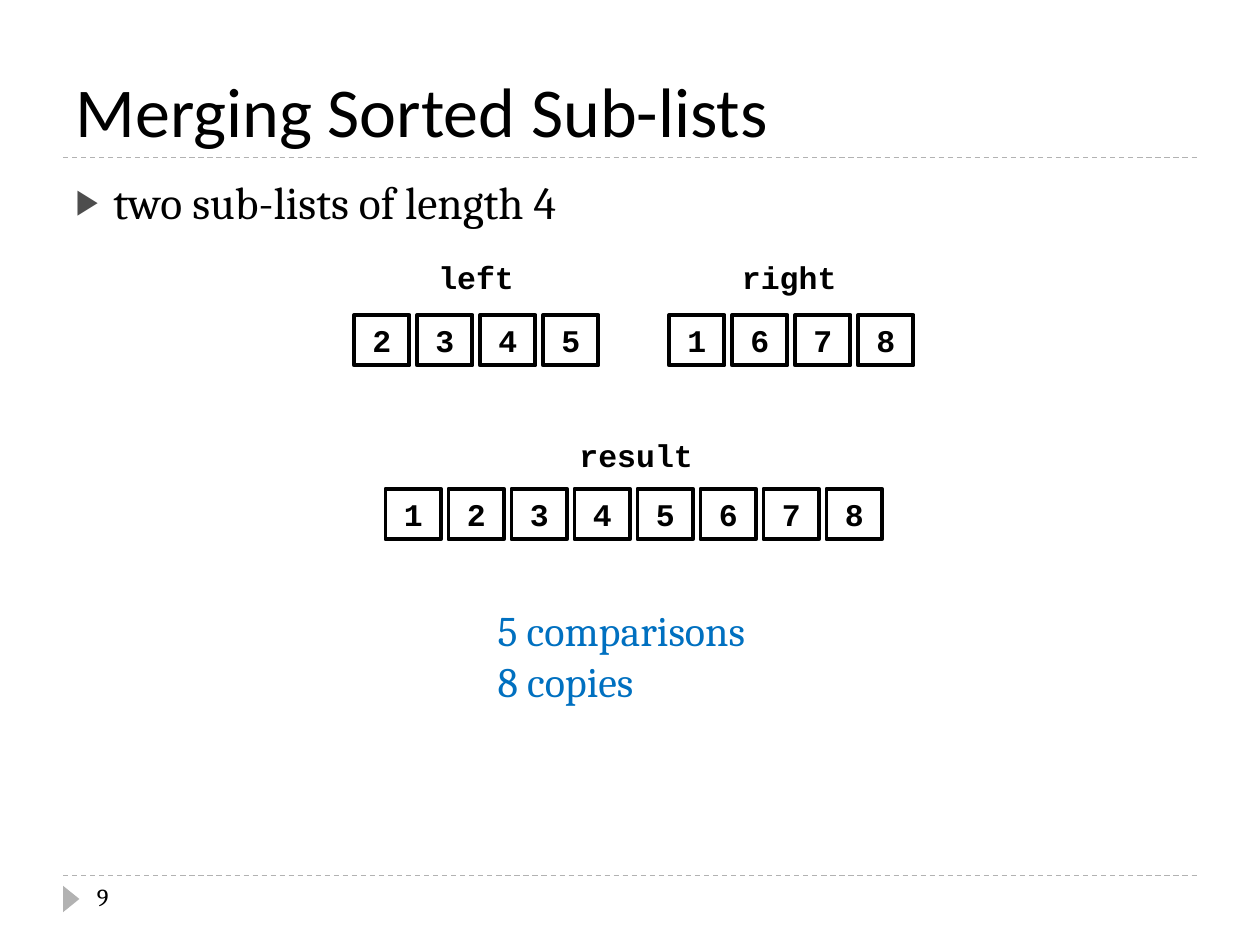
from lxml import etree
from pptx import Presentation
from pptx import util as u
from pptx.dml.color import RGBColor
from pptx.enum import dml, shapes, text
from pptx.oxml.ns import qn

COLORS = {"ink": "000000", "rule": "B2B2B2", "bullet": "4D4D4D", "count": "0070C0"}
PITCH, CELL_W, CELL_H = 0.5, 0.44, 0.4


def color(name):
    """Return the named palette colour."""
    return RGBColor.from_string(COLORS[name])


def inches(box):
    """Convert a left, top, width, height box to lengths."""
    return [u.Inches(side) for side in box]


def style(frame, size, face, ink="ink", bold=False, align=text.PP_ALIGN.LEFT):
    """Format every paragraph of a text frame alike."""
    for paragraph in frame.paragraphs:
        paragraph.alignment = align
        for run in paragraph.runs:
            run.font.size, run.font.name, run.font.bold = u.Pt(size), face, bold
            run.font.color.rgb = color(ink)


def add_label(slide, box, words, size, face, **look):
    """Place unwrapped text in the box."""
    frame = slide.shapes.add_textbox(*inches(box)).text_frame
    frame.text = words
    frame.word_wrap = False
    style(frame, size, face, **look)


def fill_placeholder(holder, box, words, size, face, anchor):
    """Move a placeholder to the box and set its text."""
    holder.left, holder.top, holder.width, holder.height = inches(box)
    frame = holder.text_frame
    frame.text = words
    frame.auto_size = text.MSO_AUTO_SIZE.NONE
    frame.vertical_anchor = anchor
    style(frame, size, face)


def add_bullets(frame):
    """Give each paragraph a small triangular bullet and a hanging indent."""
    for paragraph in frame.paragraphs:
        paragraph.space_before = u.Pt(6)
        props = paragraph._p.get_or_add_pPr()
        props.set("marL", str(u.Inches(0.3)))
        props.set("indent", str(u.Inches(-0.3)))
        tint = etree.SubElement(props, qn("a:buClr"))
        etree.SubElement(tint, qn("a:srgbClr"), val=COLORS["bullet"])
        etree.SubElement(props, qn("a:buSzPct"), val="76000")
        etree.SubElement(props, qn("a:buChar"), char="▶")


def add_rule(slide, left, top, width):
    """Draw a dashed horizontal rule."""
    ends = inches((left, top, left + width, top))
    rule = slide.shapes.add_connector(shapes.MSO_CONNECTOR.STRAIGHT, *ends)
    rule.line.color.rgb = color("rule")
    rule.line.width = u.Pt(0.75)
    rule.line.dash_style = dml.MSO_LINE.DASH
    etree.SubElement(rule._element.spPr, qn("a:effectLst"))


def add_footer(slide, box, number):
    """Draw the footer rule, page marker and page number."""
    left, top, width, height = box
    add_rule(slide, left, top, width)
    marker = slide.shapes.add_shape(
        shapes.MSO_SHAPE.ISOSCELES_TRIANGLE,
        *inches((left - 0.04, top + 0.12, 0.21, 0.13)))
    marker.rotation = 90
    marker.shadow.inherit = False
    marker.fill.solid()
    marker.fill.fore_color.rgb = color("rule")
    marker.line.fill.background()
    add_label(slide, (left + 0.17, top, 2.17, height), number, 14, "Cambria")


def add_list(slide, left, top, values):
    """Draw a row of list cells at an even pitch."""
    for column, value in enumerate(values):
        cell = slide.shapes.add_shape(
            shapes.MSO_SHAPE.RECTANGLE,
            *inches((left + column * PITCH, top, CELL_W, CELL_H)))
        cell.shadow.inherit = False
        cell.fill.background()
        cell.line.color.rgb = color("ink")
        cell.line.width = u.Pt(2.25)
        cell.text_frame.text = str(value)
        cell.text_frame.word_wrap = False
        style(cell.text_frame, 18, "Courier New", bold=True, align=text.PP_ALIGN.CENTER)


def add_merge(slide, left, top):
    """Draw the two sorted sub-lists above their merged result."""
    halves = [2, 3, 4, 5], [1, 6, 7, 8]
    lists = [
        ("left", (0.57, 0, 0.81, 0.4), 0, 0.5, halves[0]),
        ("right", (2.98, 0, 0.96, 0.4), 5 * PITCH, 0.5, halves[1]),
        ("result", (1.69, 1.41, 1.11, 0.4), PITCH / 2, 1.88, sorted(sum(halves, []))),
    ]
    for name, (x, y, width, height), column, row, values in lists:
        add_label(slide, (left + x, top + y, width, height), name, 18, "Courier New", bold=True)
        add_list(slide, left + column, top + row, values)


def main():
    """Build and save the slide."""
    deck = Presentation()
    deck.slide_width, deck.slide_height = u.Inches(10), u.Inches(7.5)
    slide = deck.slides.add_slide(deck.slide_layouts[1])
    title, body = slide.placeholders
    fill_placeholder(title, (0.5, 0.17, 9, 1.08), "Merging Sorted Sub-lists",
                     40, "Calibri", text.MSO_ANCHOR.BOTTOM)
    fill_placeholder(body, (0.5, 1.33, 9, 5.4), "two sub-lists of length 4",
                     26, "Cambria", text.MSO_ANCHOR.TOP)
    add_bullets(body.text_frame)
    add_rule(slide, 0.5, 1.25, 9)
    add_footer(slide, (0.5, 6.95, 9, 0.4), "9")
    add_merge(slide, 2.81, 2)
    add_label(slide, (3.85, 4.75, 2.28, 0.91), "5 comparisons\n8 copies",
              24, "Cambria", ink="count")
    deck.save("out.pptx")


if __name__ == "__main__":
    main()
